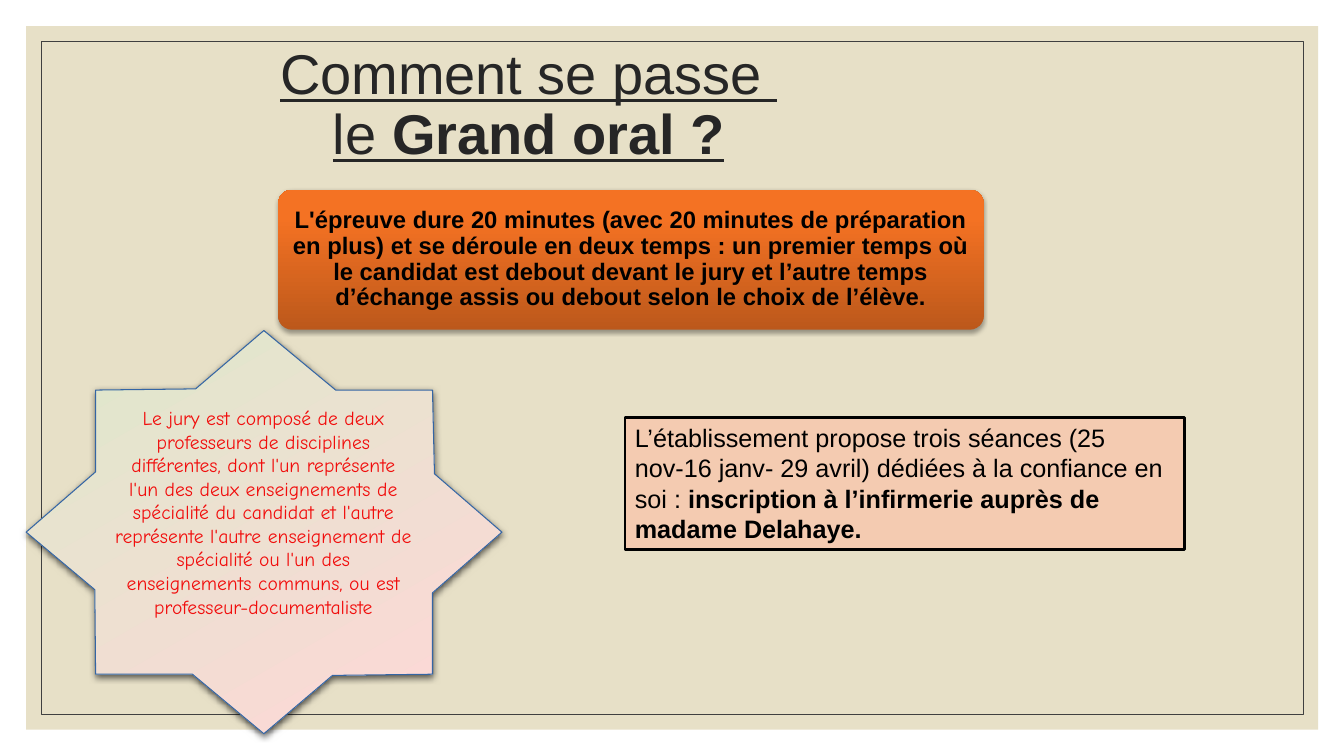
from lxml import etree
from pptx import Presentation
from pptx import util as u
from pptx.dml.color import RGBColor
from pptx.enum import shapes, text
from pptx.oxml.ns import qn

Cm, Pt = u.Cm, u.Pt


def rgb(value):
    return RGBColor.from_string(value)


def decorate(sp, colours, angle, alpha, blur, dist):
    """Give a shape a two-stop gradient and a black shadow straight below it."""
    sp.fill.gradient()
    sp.fill.gradient_angle = angle
    for stop, (position, colour) in zip(sp.fill.gradient_stops, colours):
        stop.position = position
        stop.color.rgb = rgb(colour)
    effects = etree.SubElement(sp.element.spPr, qn("a:effectLst"))
    shadow = etree.SubElement(effects, qn("a:outerShdw"), blurRad=str(Pt(blur)),
                              dist=str(Pt(dist)), dir="5400000", algn="ctr",
                              rotWithShape="0")
    black = etree.SubElement(shadow, qn("a:srgbClr"), val="000000")
    etree.SubElement(black, qn("a:alpha"), val=str(alpha * 1000))


prs = Presentation()
prs.slide_width, prs.slide_height = Cm(33.87), Cm(19.05)
s = prs.slides.add_slide(prs.slide_layouts[5])

# Beige background and its thin frame
panel = s.shapes.add_shape(shapes.MSO_SHAPE.RECTANGLE, Cm(0.66), Cm(0.66), Cm(32.56), Cm(17.73))
panel.shadow.inherit = False
panel.fill.solid()
panel.fill.fore_color.rgb = rgb("E7E0C7")
panel.line.fill.background()

frame = s.shapes.add_shape(shapes.MSO_SHAPE.RECTANGLE, Cm(1.04), Cm(1.04), Cm(31.8), Cm(16.97))
frame.shadow.inherit = False
frame.fill.background()
frame.line.color.rgb = rgb("404040")
frame.line.width = Pt(0.5)

# Title, brought in front of the background
title = s.shapes.title
title.element.getparent().append(title.element)
title.left, title.top, title.width, title.height = Cm(1.5), Cm(1.07), Cm(23.65), Cm(3.23)
tf = title.text_frame
tf.auto_size = text.MSO_AUTO_SIZE.NONE
tf.vertical_anchor = text.MSO_ANCHOR.MIDDLE
p = tf.paragraphs[0]
p.alignment = text.PP_ALIGN.CENTER
p.line_spacing = 0.9
p.font.name, p.font.size = "Arial", Pt(40)
p.font.color.rgb = rgb("262626")
p.font.underline = True
p.add_run().text = "Comment se passe "
p.add_line_break()
p.add_run().text = "le "
r = p.add_run()
r.text = "Grand oral ?"
r.font.bold = True

# Course of the exam
exam = s.shapes.add_shape(shapes.MSO_SHAPE.ROUNDED_RECTANGLE,
                          Cm(7.01), Cm(4.78), Cm(17.78), Cm(3.53))
exam.adjustments[0] = 0.1
exam.line.fill.background()
decorate(exam, [(0, "BC581B"), (0.8, "F47223")], 90, 35, 3.1, 1.8)
tf = exam.text_frame
tf.margin_left = tf.margin_right = tf.margin_top = tf.margin_bottom = Cm(0.18)
tf.vertical_anchor = text.MSO_ANCHOR.MIDDLE
p = tf.paragraphs[0]
p.text = ("L'épreuve dure 20 minutes (avec 20 minutes de préparation en plus) et se déroule "
          "en deux temps : un premier temps où le candidat est debout devant le jury et "
          "l’autre temps d’échange assis ou debout selon le choix de l’élève.")
p.alignment = text.PP_ALIGN.CENTER
p.line_spacing = 0.9
p.font.name, p.font.size, p.font.bold = "Arial", Pt(17), True
p.font.color.rgb = rgb("000000")

# Jury star, outlined in hundredths of a centimetre
outline = [(66, 1341), (239, 1486), (241, 1699), (485, 1699), (665, 1849), (838, 1702),
           (1090, 1699), (1090, 1494), (1265, 1341), (1095, 1194), (1090, 983), (846, 983),
           (665, 833), (493, 980), (241, 983), (241, 1189)]
builder = s.shapes.build_freeform(*outline[0], scale=Cm(0.01))
builder.add_line_segments(outline[1:], close=True)
star = builder.convert_to_shape()
star.line.color.rgb = rgb("3465A4")
star.line.width = Pt(0)
decorate(star, [(0, "DDE8CB"), (1, "FFD7D7")], 300, 63, 4.5, 1.5)

jury = s.shapes.add_textbox(Cm(2.64), Cm(10.11), Cm(8), Cm(7.14))
tf = jury.text_frame
tf.word_wrap = True
p = tf.paragraphs[0]
p.text = ("Le jury est composé de deux professeurs de disciplines différentes, dont l'un "
          "représente l'un des deux enseignements de spécialité du candidat et l'autre "
          "représente l'autre enseignement de spécialité ou l'un des enseignements communs, "
          "ou est professeur-documentaliste")
p.alignment = text.PP_ALIGN.CENTER
p.font.name, p.font.size = "Comic Neue", Pt(14)
p.font.color.rgb = rgb("F10D0C")

# Confidence sessions
sessions = s.shapes.add_textbox(Cm(15.75), Cm(10.52), Cm(14.1), Cm(3.33))
sessions.fill.solid()
sessions.fill.fore_color.rgb = rgb("F4CBB1")
sessions.line.color.rgb = rgb("000000")
sessions.line.width = Pt(2)
tf = sessions.text_frame
tf.word_wrap = True
tf.auto_size = text.MSO_AUTO_SIZE.SHAPE_TO_FIT_TEXT
p = tf.paragraphs[0]
p.font.name, p.font.size = "Arial", Pt(18)
p.font.color.rgb = rgb("000000")
p.add_run().text = ("L’établissement propose trois séances (25 nov-16 janv- 29 avril) "
                    "dédiées à la confiance en soi : ")
r = p.add_run()
r.text = "inscription à l’infirmerie auprès de madame Delahaye."
r.font.bold = True

prs.save("out.pptx")
